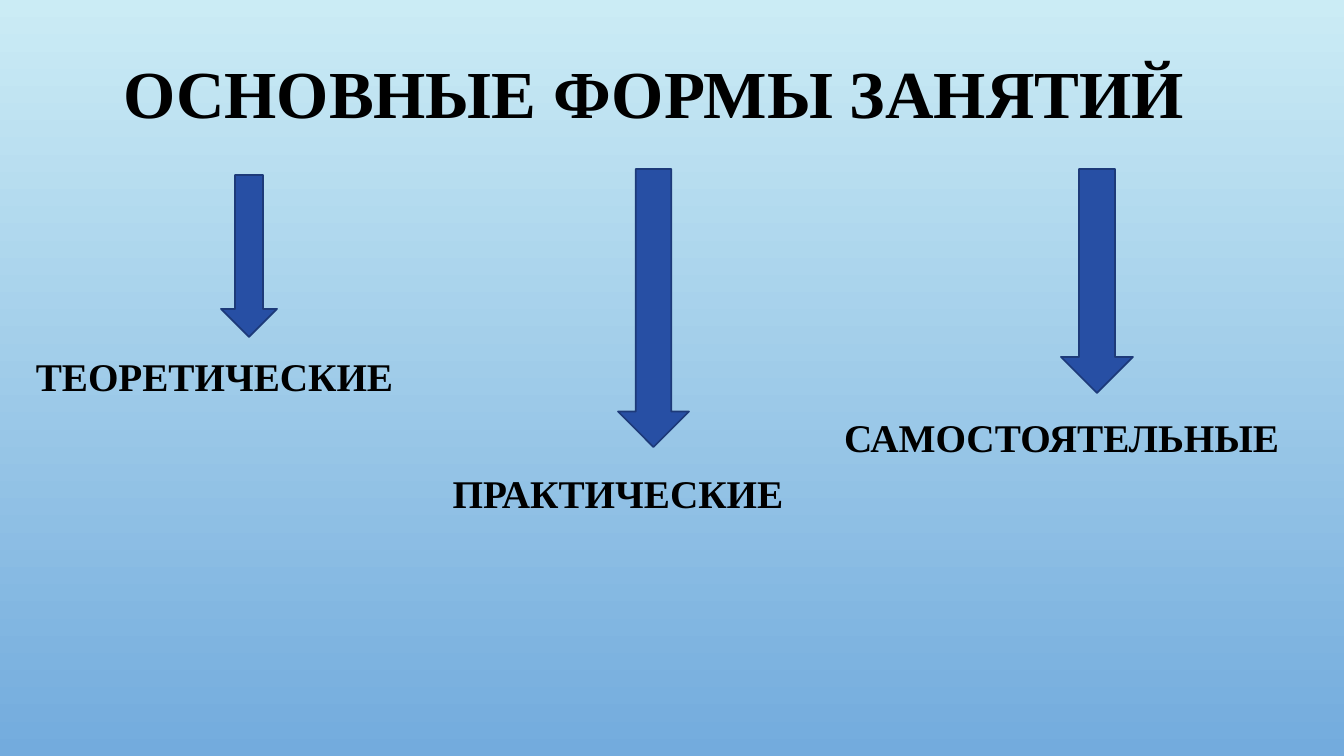
from pptx import Presentation
from pptx import util as u
from pptx.dml.color import RGBColor
from pptx.enum import shapes, text

PX = 914400 / 100.8
SLIDE_SIZE = (1344, 756)
SKY = ("CBECF5", "73ABDD")
ARROW_FILL, ARROW_EDGE, INK = "274FA4", "1D3A79", "000000"
FONT = "Times New Roman"
MIDDLE, TOP, BOTTOM = text.MSO_ANCHOR.MIDDLE, text.MSO_ANCHOR.TOP, text.MSO_ANCHOR.BOTTOM

HEADING = ("ОСНОВНЫЕ ФОРМЫ ЗАНЯТИЙ", (83, 8, 1142, 177), MIDDLE)
LESSON_FORMS = [
    ("ТЕОРЕТИЧЕСКИЕ", (21, 340, 387, 64), BOTTOM, (221, 175, 56, 162)),
    ("ПРАКТИЧЕСКИЕ", (395, 472, 446, 125), TOP, (618, 169, 71, 278)),
    ("САМОСТОЯТЕЛЬНЫЕ", (831, 401, 461, 64), BOTTOM, (1061, 169, 72, 224)),
]


def px(*lengths):
    return [u.Emu(round(length * PX)) for length in lengths]


def color(value):
    return RGBColor.from_string(value)


def add_label(slide, wording, box, anchor, size, spacing):
    frame = slide.shapes.add_textbox(*px(*box)).text_frame
    frame.word_wrap = True
    frame.vertical_anchor = anchor
    line = frame.paragraphs[0]
    line.alignment = text.PP_ALIGN.CENTER
    line.line_spacing = spacing
    run = line.add_run()
    run.text = wording
    run.font.name = FONT
    run.font.size = u.Pt(size)
    run.font.bold = True
    run.font.color.rgb = color(INK)


def add_arrow(slide, box):
    arrow = slide.shapes.add_shape(shapes.MSO_SHAPE.DOWN_ARROW, *px(*box))
    arrow.shadow.inherit = False
    arrow.fill.solid()
    arrow.fill.fore_color.rgb = color(ARROW_FILL)
    arrow.line.color.rgb = color(ARROW_EDGE)
    arrow.line.width = u.Pt(1.25)


def main():
    deck = Presentation()
    deck.slide_width, deck.slide_height = px(*SLIDE_SIZE)
    slide = deck.slides.add_slide(deck.slide_layouts[6])

    sky = slide.background.fill
    sky.gradient()
    sky.gradient_angle = 270
    for stop, shade in zip(sky.gradient_stops, SKY):
        stop.color.rgb = color(shade)

    add_label(slide, *HEADING, size=48, spacing=0.9)
    for wording, box, anchor, arrow_box in LESSON_FORMS:
        add_label(slide, wording, box, anchor, size=28, spacing=0.85)
        add_arrow(slide, arrow_box)

    deck.save("out.pptx")


if __name__ == "__main__":
    main()
